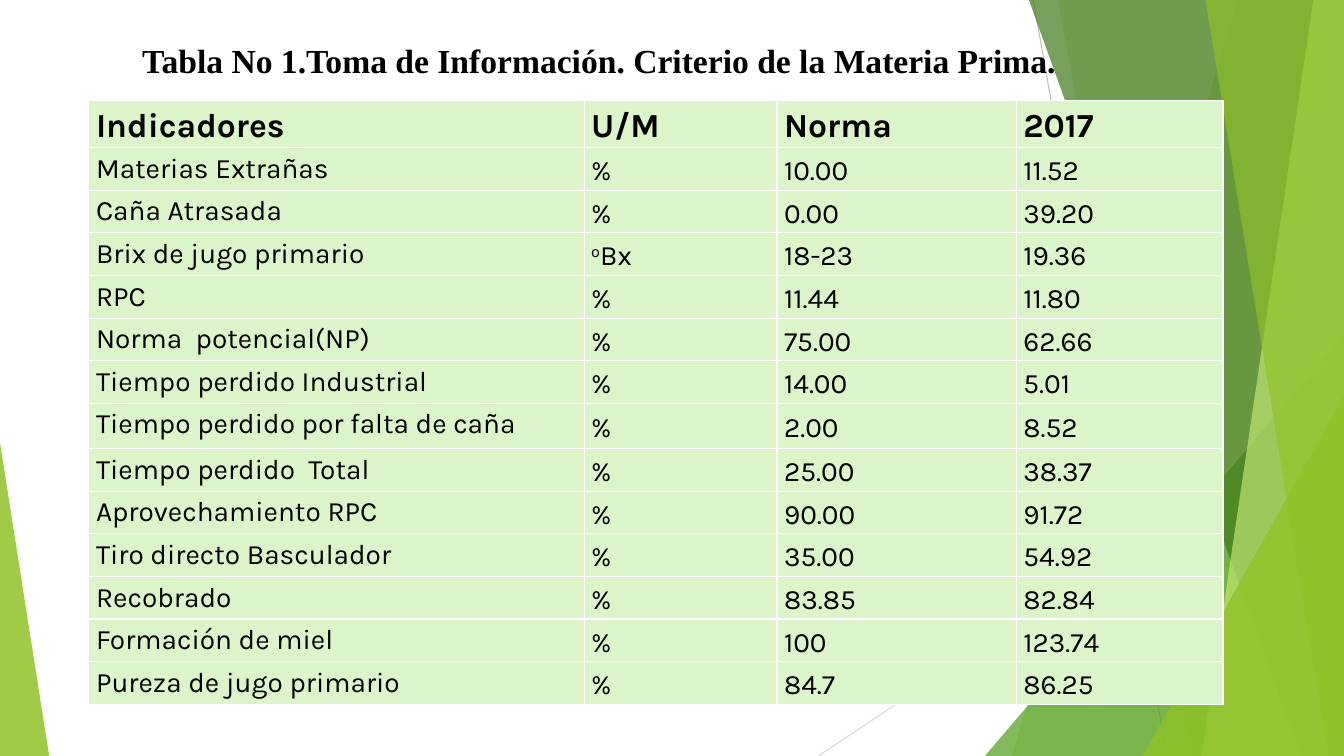
from lxml.etree import SubElement
from pptx import Presentation
from pptx.dml.color import RGBColor
from pptx.enum.shapes import MSO_CONNECTOR, MSO_SHAPE
from pptx.enum.text import MSO_ANCHOR, MSO_AUTO_SIZE, PP_ALIGN
from pptx.oxml.ns import qn
from pptx.util import Cm, Pt

WHITE = RGBColor(0xFF, 0xFF, 0xFF)
BLACK = RGBColor(0x00, 0x00, 0x00)
MINT = RGBColor(0xDB, 0xF4, 0xCA)
LIME = RGBColor(0x90, 0xC2, 0x26)
PALE_LIME = RGBColor(0xC0, 0xE4, 0x74)
LEAF = RGBColor(0x54, 0xA0, 0x21)
FOREST = RGBColor(0x3F, 0x78, 0x19)
GREY = RGBColor(0xBF, 0xBF, 0xBF)
LIGHT_GREY = RGBColor(0xD9, 0xD9, 0xD9)

SLIDE_WIDTH, SLIDE_HEIGHT = 33.87, 19.05
TITLE = "Tabla No 1.Toma de Información. Criterio de la Materia Prima."
HEADINGS = ("Indicadores", "U/M", "Norma", "2017")
INDICATORS = [
    ("Materias Extrañas", "%", "10.00", "11.52"),
    ("Caña Atrasada", "%", "0.00", "39.20"),
    ("Brix de jugo primario", "oBx", "18-23", "19.36"),
    ("RPC", "%", "11.44", "11.80"),
    ("Norma  potencial(NP)", "%", "75.00", "62.66"),
    ("Tiempo perdido Industrial", "%", "14.00", "5.01"),
    ("Tiempo perdido por falta de caña", "%", "2.00", "8.52"),
    ("Tiempo perdido  Total", "%", "25.00", "38.37"),
    ("Aprovechamiento RPC", "%", "90.00", "91.72"),
    ("Tiro directo Basculador", "%", "35.00", "54.92"),
    ("Recobrado", "%", "83.85", "82.84"),
    ("Formación de miel", "%", "100", "123.74"),
    ("Pureza de jugo primario", "%", "84.7", "86.25"),
]
COLUMN_WIDTHS = (12.48, 4.86, 6.03, 5.21)
TABLE_HEIGHT = 15.21
HEADING_HEIGHT = 1.18
TALL_ROW, TALL_HEIGHT = 7, 1.14


def add_ray(slide, start, end, color):
    """Draw a thin line across the background."""
    ray = slide.shapes.add_connector(
        MSO_CONNECTOR.STRAIGHT, *map(Cm, start), *map(Cm, end))
    ray.line.color.rgb = color
    ray.line.width = Pt(0.75)
    SubElement(ray.element.spPr, qn("a:effectLst"))


def paint(shape, color, opacity):
    """Fill a shape with a see-through colour, without outline or shadow."""
    shape.shadow.inherit = False
    shape.line.fill.background()
    shape.fill.solid()
    shape.fill.fore_color.rgb = color
    rgb = shape.element.spPr.find(".//" + qn("a:srgbClr"))
    SubElement(rgb, qn("a:alpha"), val=str(opacity * 1000))


def add_band(slide, top_x, bottom_x, color, opacity):
    """Draw a full-height band from a slanted left edge to the slide's right."""
    builder = slide.shapes.build_freeform(Cm(top_x), 0)
    builder.add_line_segments([
        (Cm(SLIDE_WIDTH), 0),
        (Cm(SLIDE_WIDTH), Cm(SLIDE_HEIGHT)),
        (Cm(bottom_x), Cm(SLIDE_HEIGHT)),
    ])
    paint(builder.convert_to_shape(), color, opacity)


def add_corner(slide, left, top, width, apex, color, opacity):
    """Draw a triangle that stands on the bottom of the slide."""
    corner = slide.shapes.add_shape(
        MSO_SHAPE.ISOSCELES_TRIANGLE,
        Cm(left), Cm(top), Cm(width), Cm(SLIDE_HEIGHT - top))
    corner.adjustments[0] = apex
    paint(corner, color, opacity)


def add_background(slide):
    add_ray(slide, (26.04, 0), (29.41, SLIDE_HEIGHT), GREY)
    add_ray(slide, (SLIDE_WIDTH, 10.24), (20.62, SLIDE_HEIGHT), LIGHT_GREY)
    add_band(slide, 31.19, 25.5, LIME, 30)
    add_band(slide, 26.67, 30.05, LIME, 20)
    add_corner(slide, 24.82, 8.46, 9.05, 1, LEAF, 72)
    add_band(slide, 25.93, 32.79, FOREST, 70)
    add_band(slide, 33.1, 30.28, PALE_LIME, 70)
    add_band(slide, 30.38, 33.48, LIME, 65)
    add_corner(slide, 28.8, 9.98, 5.07, 1, LIME, 80)
    add_corner(slide, 0, 11.15, 1.24, 0, LIME, 85)


def add_run(paragraph, text, font_name, size, bold):
    run = paragraph.add_run()
    run.text = text
    run.font.name = font_name
    run.font.size = Pt(size)
    run.font.bold = bold
    run.font.color.rgb = BLACK
    return run


def add_borders(cell):
    properties = cell._tc.get_or_add_tcPr()
    for side in ("lnL", "lnR", "lnT", "lnB"):
        border = SubElement(properties, qn("a:" + side), w=str(Pt(1)))
        fill = SubElement(border, qn("a:solidFill"))
        SubElement(fill, qn("a:srgbClr"), val=str(WHITE))


def fill_cell(cell, text, is_heading, is_label):
    add_borders(cell)
    cell.fill.solid()
    cell.fill.fore_color.rgb = MINT
    cell.margin_left = cell.margin_right = Cm(0.18)
    cell.margin_top = cell.margin_bottom = 0
    top_aligned = is_heading or is_label
    cell.vertical_anchor = MSO_ANCHOR.TOP if top_aligned else MSO_ANCHOR.MIDDLE
    paragraph = cell.text_frame.paragraphs[0]
    paragraph.alignment = PP_ALIGN.JUSTIFY
    paragraph.line_spacing = 1.15
    style = ("Karla", 24 if is_heading else 20, is_heading)
    if text == "oBx":
        degree = add_run(paragraph, "o", *style)
        degree._r.get_or_add_rPr().set("baseline", "30000")
        text = "Bx"
    add_run(paragraph, text, *style)


def add_indicator_table(slide):
    rows = [HEADINGS, *INDICATORS]
    table = slide.shapes.add_table(
        len(rows), len(HEADINGS), Cm(2.24), Cm(2.54),
        Cm(sum(COLUMN_WIDTHS)), Cm(TABLE_HEIGHT)).table
    table.first_row = table.horz_banding = False
    for column, width in zip(table.columns, COLUMN_WIDTHS):
        column.width = Cm(width)
    shared_height = Cm(TABLE_HEIGHT - HEADING_HEIGHT - TALL_HEIGHT)
    for row in table.rows:
        row.height = shared_height // (len(rows) - 2)
    table.rows[0].height = Cm(HEADING_HEIGHT)
    table.rows[TALL_ROW].height = Cm(TALL_HEIGHT)
    for r, texts in enumerate(rows):
        for c, text in enumerate(texts):
            fill_cell(table.cell(r, c), text, r == 0, c == 0)


def set_title(slide):
    """Format the title and bring it in front of the background bands."""
    title = slide.shapes.title
    title.left, title.top = Cm(3.33), Cm(0.89)
    title.width, title.height = Cm(24.56), Cm(1.27)
    frame = title.text_frame
    frame.word_wrap = True
    frame.auto_size = MSO_AUTO_SIZE.SHAPE_TO_FIT_TEXT
    frame.vertical_anchor = MSO_ANCHOR.MIDDLE
    paragraph = frame.paragraphs[0]
    paragraph.alignment = PP_ALIGN.JUSTIFY
    add_run(paragraph, TITLE, "Times New Roman", 24, True)
    slide.shapes.element.append(title.element)


def main():
    presentation = Presentation()
    presentation.slide_width = Cm(SLIDE_WIDTH)
    presentation.slide_height = Cm(SLIDE_HEIGHT)
    title_only = presentation.slide_layouts[5]
    slide = presentation.slides.add_slide(title_only)
    add_background(slide)
    add_indicator_table(slide)
    set_title(slide)
    presentation.save("out.pptx")


if __name__ == "__main__":
    main()
